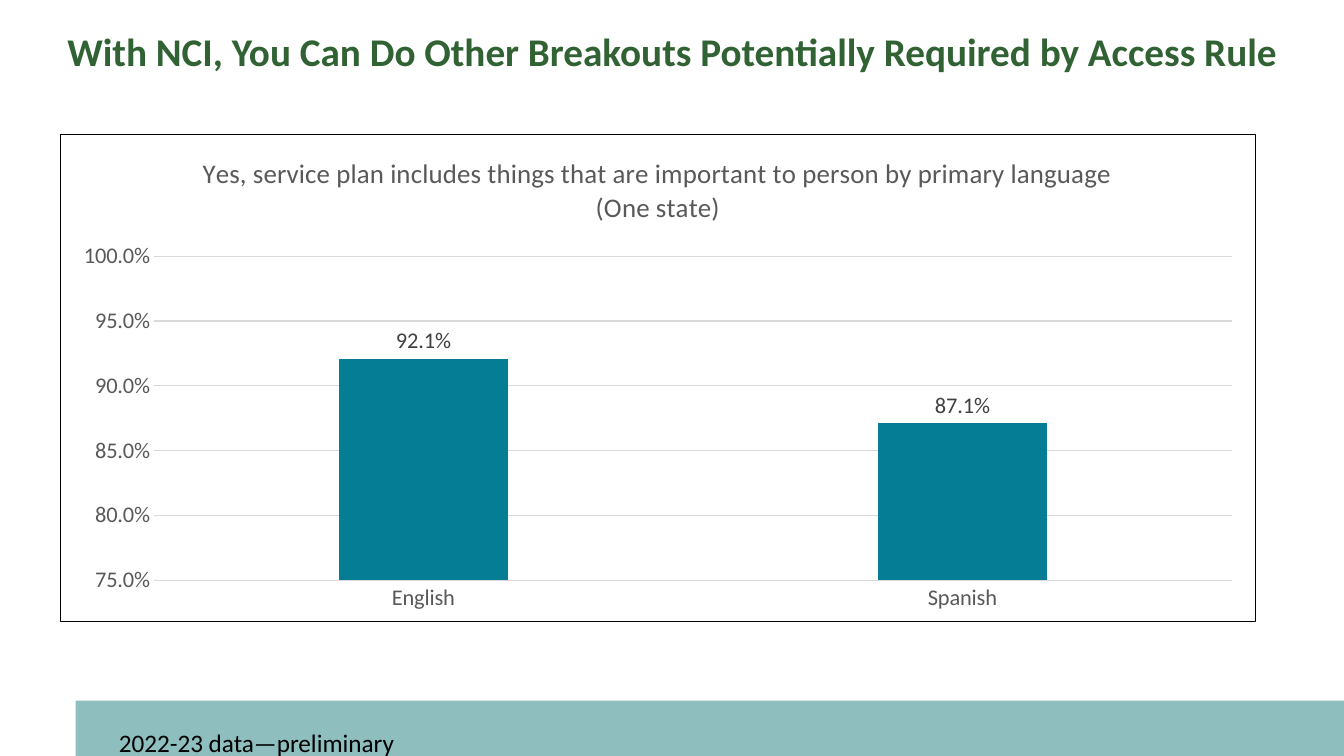
from lxml import etree
from pptx import Presentation
from pptx.chart.data import CategoryChartData
from pptx.dml.color import RGBColor
from pptx.enum.chart import XL_CHART_TYPE, XL_LABEL_POSITION, XL_TICK_MARK
from pptx.enum.shapes import MSO_SHAPE
from pptx.enum.text import MSO_ANCHOR, PP_ALIGN
from pptx.oxml import parse_xml
from pptx.oxml.ns import nsdecls, qn
from pptx.util import Inches, Pt

COLUMN = XL_CHART_TYPE.COLUMN_CLUSTERED
OUTSIDE_END = XL_LABEL_POSITION.OUTSIDE_END
NO_TICK = XL_TICK_MARK.NONE
RECT = MSO_SHAPE.RECTANGLE
TOP, MIDDLE = MSO_ANCHOR.TOP, MSO_ANCHOR.MIDDLE
LEFT, CENTER = PP_ALIGN.LEFT, PP_ALIGN.CENTER
FONT = "Calibri"
PERCENT = "###0.0%"
GRAY, RULE = "595959", "D9D9D9"


def rgb(value):
    return RGBColor.from_string(value)


def set_font(font, size, color, bold=False):
    font.name = FONT
    font.size = Pt(size)
    font.bold = bold
    font.color.rgb = rgb(color)


def set_line(line, color, width=0.75):
    line.color.rgb = rgb(color)
    line.width = Pt(width)


def add_text(s, text, box, size=18, color="000000", bold=False,
             align=LEFT, anchor=TOP, spacing=None):
    tf = s.shapes.add_textbox(*map(Inches, box)).text_frame
    tf.word_wrap = True
    tf.vertical_anchor = anchor
    p = tf.paragraphs[0]
    p.alignment = align
    p.line_spacing = spacing
    r = p.add_run()
    r.text = text
    set_font(r.font, size, color, bold)


def add_band(s, box, color):
    sp = s.shapes.add_shape(RECT, *map(Inches, box))
    sp.shadow.inherit = False
    sp.fill.solid()
    sp.fill.fore_color.rgb = rgb(color)
    sp.line.fill.background()


def add_border(chart, color, width=0.75):
    sp_pr = parse_xml(f"<c:spPr {nsdecls('c', 'a')}><a:noFill/></c:spPr>")
    ln = etree.SubElement(sp_pr, qn("a:ln"), w=str(Pt(width)))
    fill = etree.SubElement(ln, qn("a:solidFill"))
    etree.SubElement(fill, qn("a:srgbClr"), val=color)
    chart.element.find(qn("c:chart")).addnext(sp_pr)


def style_axes(chart):
    for axis in (chart.category_axis, chart.value_axis):
        axis.major_tick_mark = axis.minor_tick_mark = NO_TICK
        set_font(axis.tick_labels.font, 16, GRAY)
    set_line(chart.category_axis.format.line, RULE)
    values = chart.value_axis
    values.minimum_scale, values.maximum_scale = 0.75, 1
    values.major_unit = 0.05
    values.format.line.fill.background()
    set_line(values.major_gridlines.format.line, RULE)
    values.tick_labels.number_format = PERCENT
    values.tick_labels.number_format_is_linked = False


def style_columns(plot, color):
    plot.vary_by_categories = False
    plot.gap_width = 219
    plot.overlap = -27
    fill = plot.series[0].format.fill
    fill.solid()
    fill.fore_color.rgb = rgb(color)
    plot.has_data_labels = True
    labels = plot.data_labels
    labels.show_value = True
    labels.position = OUTSIDE_END
    labels.number_format = PERCENT
    labels.number_format_is_linked = False
    set_font(labels.font, 16, "404040")


def add_column_chart(s, title, values, box, color):
    data = CategoryChartData(number_format=PERCENT)
    data.categories = list(values)
    data.add_series("Series 1", list(values.values()))
    chart = s.shapes.add_chart(COLUMN, *map(Inches, box), data).chart
    set_font(chart.font, 16, "000000")
    chart.has_legend = False
    chart.has_title = True
    p = chart.chart_title.text_frame.paragraphs[0]
    r = p.add_run()
    r.text = title
    set_font(r.font, 19.2, GRAY)
    chart.chart_title.include_in_layout = False
    style_axes(chart)
    style_columns(chart.plots[0], color)
    add_border(chart, "000000")


def main():
    prs = Presentation()
    prs.slide_width, prs.slide_height = Inches(13.33), Inches(7.5)
    s = prs.slides.add_slide(prs.slide_layouts[6])
    add_band(s, (0.75, 6.95, 12.58, 0.55), "8EBEBE")
    add_text(s, "With NCI, You Can Do Other Breakouts Potentially Required by Access Rule",
             (0.33, 0.15, 12.67, 0.77), size=28, color="316234", bold=True,
             align=CENTER, anchor=MIDDLE, spacing=0.9)
    add_column_chart(
        s, "Yes, service plan includes things that are important to person "
           "by primary language (One state)",
        {"English": 0.921, "Spanish": 0.871}, (0.59, 1.33, 11.87, 4.84), "057E95")
    add_text(s, "2022-23 data—preliminary", (1.08, 7.17, 4.65, 0.4))
    prs.save("out.pptx")


if __name__ == "__main__":
    main()
